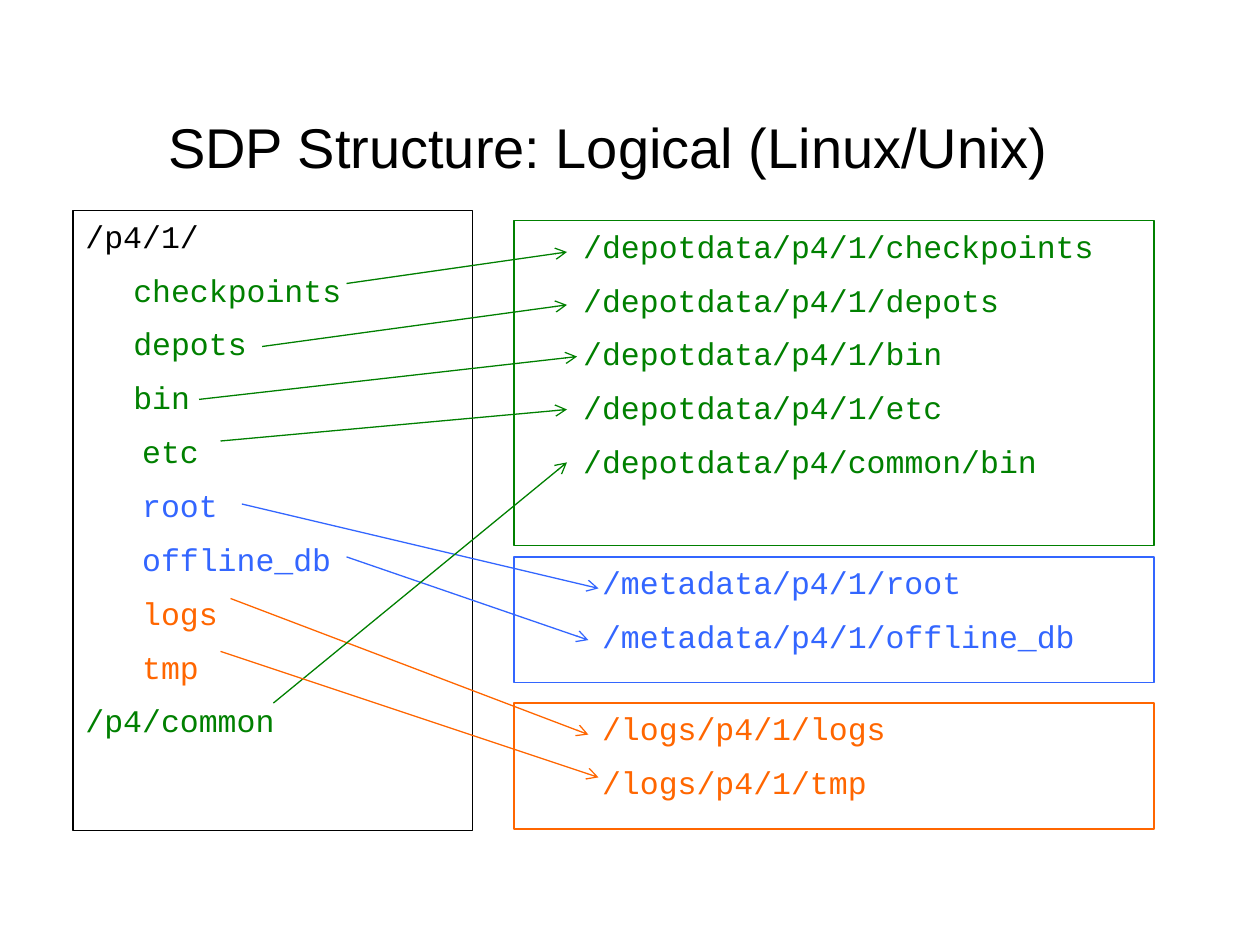
from typing import NamedTuple

from lxml import etree
from pptx import Presentation
from pptx.dml.color import RGBColor
from pptx.enum.shapes import MSO_CONNECTOR, MSO_SHAPE
from pptx.enum.text import MSO_ANCHOR, PP_ALIGN
from pptx.oxml.ns import qn
from pptx.util import Inches, Pt

STRAIGHT = MSO_CONNECTOR.STRAIGHT
RECTANGLE = MSO_SHAPE.RECTANGLE
TOP, MIDDLE = MSO_ANCHOR.TOP, MSO_ANCHOR.MIDDLE
LEFT, CENTER = PP_ALIGN.LEFT, PP_ALIGN.CENTER

BLACK = RGBColor(0x00, 0x00, 0x00)
GREEN = RGBColor(0x00, 0x80, 0x00)
BLUE = RGBColor(0x33, 0x66, 0xFF)
ORANGE = RGBColor(0xFF, 0x66, 0x00)

LINE_WIDTH = Pt(0.75)
TARGET_LEFT, TARGET_WIDTH = 4.08, 5.08


class Entry(NamedTuple):
    text: str
    color: RGBColor
    indent: float = 0


class Box(NamedTuple):
    left: float
    top: float
    width: float
    height: float
    color: RGBColor
    entries: list[Entry]


class Arrow(NamedTuple):
    start: tuple[float, float]
    end: tuple[float, float]
    color: RGBColor


def target_box(top: float, height: float, color: RGBColor, indent: float, paths: list[str]) -> Box:
    entries = [Entry(text, color, indent) for text in paths]
    return Box(TARGET_LEFT, top, TARGET_WIDTH, height, color, entries)


BOXES = [
    target_box(1.75, 2.58, GREEN, 0.45, [
        "/depotdata/p4/1/checkpoints",
        "/depotdata/p4/1/depots",
        "/depotdata/p4/1/bin",
        "/depotdata/p4/1/etc",
        "/depotdata/p4/common/bin",
    ]),
    target_box(4.42, 1, BLUE, 0.6, ["/metadata/p4/1/root", "/metadata/p4/1/offline_db"]),
    target_box(5.58, 1, ORANGE, 0.6, ["/logs/p4/1/logs", "/logs/p4/1/tmp"]),
    Box(0.58, 1.67, 3.17, 4.92, BLACK, [
        Entry("/p4/1/", BLACK),
        Entry("checkpoints", GREEN, 0.38),
        Entry("depots", GREEN, 0.38),
        Entry("bin", GREEN, 0.38),
        Entry("etc", GREEN, 0.45),
        Entry("root", BLUE, 0.45),
        Entry("offline_db", BLUE, 0.45),
        Entry("logs", ORANGE, 0.45),
        Entry("tmp", ORANGE, 0.45),
        Entry("/p4/common", GREEN),
    ]),
]

ARROWS = [
    Arrow((2.75, 2.25), (4.5, 2), GREEN),
    Arrow((2.08, 2.75), (4.5, 2.42), GREEN),
    Arrow((1.58, 3.17), (4.58, 2.83), GREEN),
    Arrow((1.75, 3.5), (4.5, 3.25), GREEN),
    Arrow((1.92, 4), (4.75, 4.67), BLUE),
    Arrow((2.75, 4.42), (4.67, 5.08), BLUE),
    Arrow((1.83, 4.75), (4.67, 5.83), ORANGE),
    Arrow((2.17, 5.58), (4.5, 3.67), GREEN),
    Arrow((1.75, 5.17), (4.75, 6.17), ORANGE),
]


def add_title(slide, text: str) -> None:
    title = slide.shapes.add_textbox(Inches(0.33), Inches(0.83), Inches(9), Inches(0.66))
    text_frame = title.text_frame
    text_frame.word_wrap = True
    text_frame.vertical_anchor = MIDDLE
    text_frame.text = text
    paragraph = text_frame.paragraphs[0]
    paragraph.alignment = CENTER
    font = paragraph.runs[0].font
    font.name, font.size = "Arial", Pt(32)
    font.color.rgb = BLACK


def add_box(slide, box: Box) -> None:
    shape = slide.shapes.add_shape(
        RECTANGLE, Inches(box.left), Inches(box.top), Inches(box.width), Inches(box.height)
    )
    shape.shadow.inherit = False
    shape.fill.background()
    shape.line.color.rgb = box.color
    shape.line.width = LINE_WIDTH
    text_frame = shape.text_frame
    text_frame.word_wrap = True
    text_frame.vertical_anchor = TOP
    text_frame.text = "\n".join(entry.text for entry in box.entries)
    for index, (paragraph, entry) in enumerate(zip(text_frame.paragraphs, box.entries)):
        paragraph.alignment = LEFT
        paragraph.space_before = Pt(9.2 if index else 0)
        paragraph._p.get_or_add_pPr().set("marL", str(Inches(entry.indent)))
        font = paragraph.runs[0].font
        font.name, font.size = "Courier New", Pt(18)
        font.color.rgb = entry.color


def add_arrow(slide, arrow: Arrow) -> None:
    connector = slide.shapes.add_connector(
        STRAIGHT, *(Inches(value) for value in arrow.start + arrow.end)
    )
    connector.line.color.rgb = arrow.color
    connector.line.width = LINE_WIDTH
    etree.SubElement(connector.line._get_or_add_ln(), qn("a:tailEnd"), type="arrow")
    etree.SubElement(connector._element.spPr, qn("a:effectLst"))


def main() -> None:
    presentation = Presentation()
    presentation.slide_width, presentation.slide_height = Inches(10), Inches(7.5)
    slide = presentation.slides.add_slide(presentation.slide_layouts[6])
    add_title(slide, "SDP Structure: Logical (Linux/Unix)")
    for box in BOXES:
        add_box(slide, box)
    for arrow in ARROWS:
        add_arrow(slide, arrow)
    presentation.save("out.pptx")


if __name__ == "__main__":
    main()
